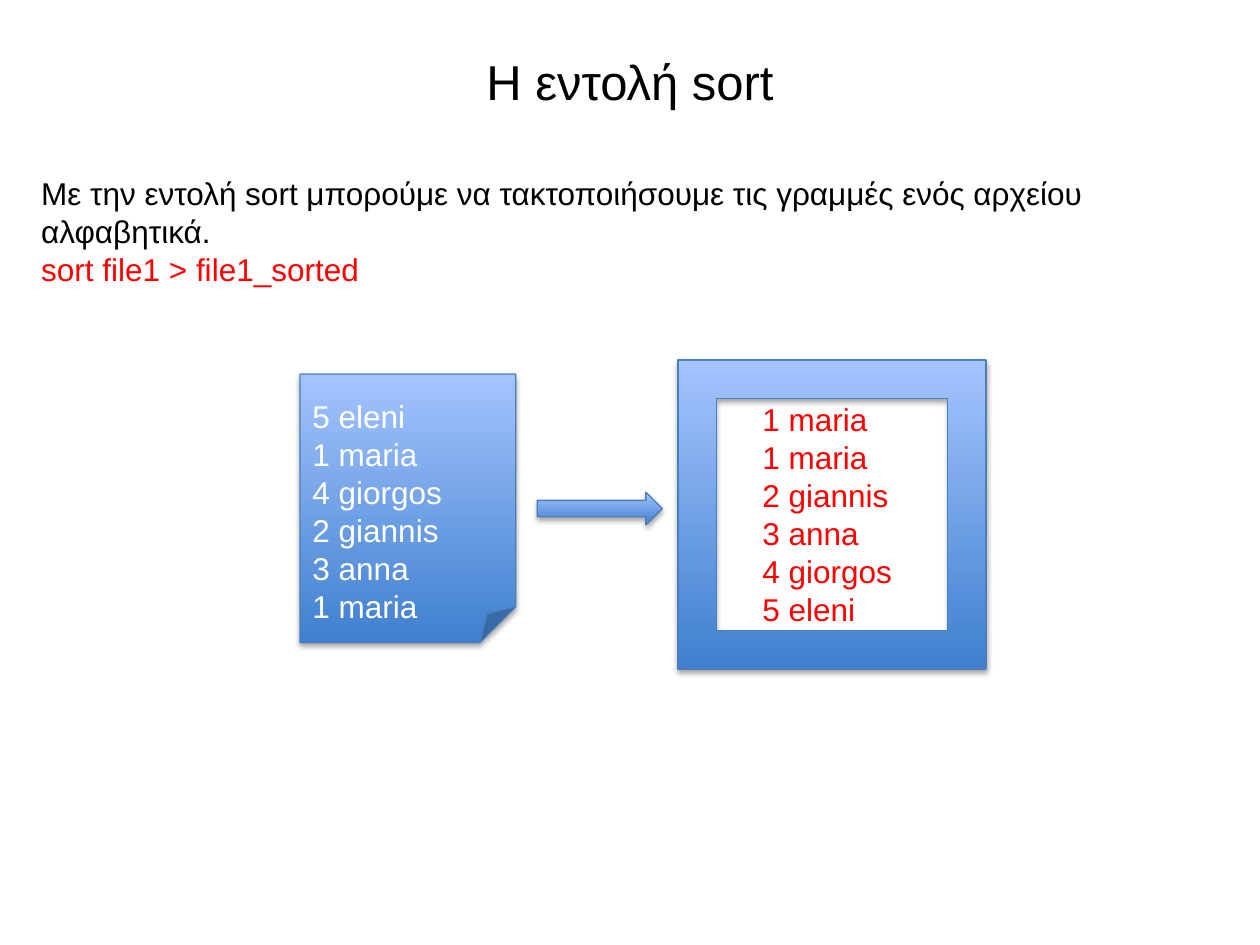
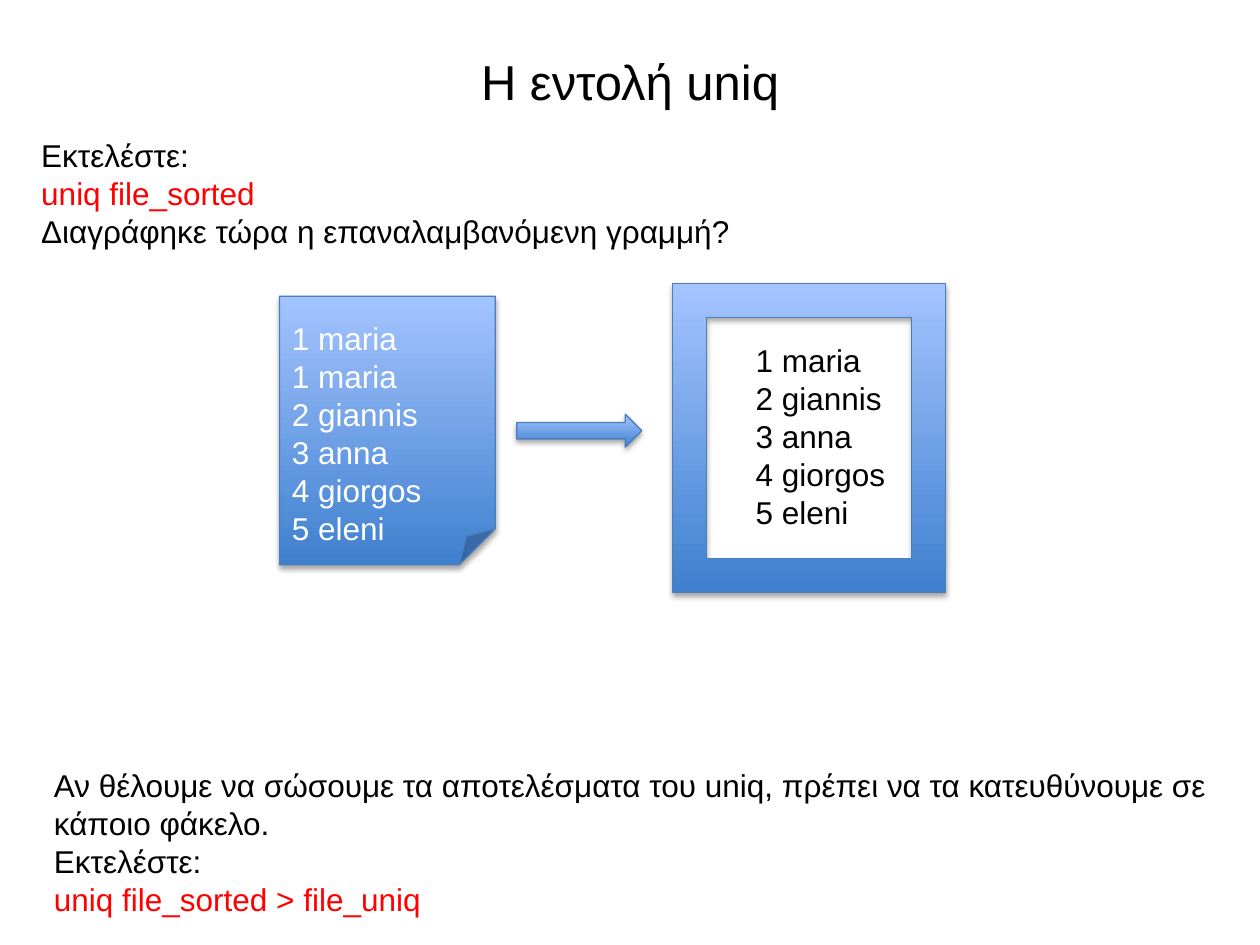
from pptx import Presentation
from pptx.util import Pt
from pptx.dml.color import RGBColor
from pptx.enum.shapes import MSO_SHAPE
from pptx.enum.text import PP_ALIGN, MSO_ANCHOR
from lxml import etree

BLACK = RGBColor(0, 0, 0)
WHITE = RGBColor(0xFF, 0xFF, 0xFF)
RED = RGBColor(0xFF, 0, 0)
DEEP = RGBColor(0x3F, 0x80, 0xCE)
PALE = RGBColor(0xA4, 0xC4, 0xFF)
EDGE = RGBColor(0x4B, 0x7E, 0xBC)
FONT = "Arial"
SHADE = (
    '<a:outerShdw xmlns:a="http://schemas.openxmlformats.org/drawingml/2006/main" '
    'blurRad="40000" dist="23000" dir="5400000" rotWithShape="0">'
    '<a:srgbClr val="000000"><a:alpha val="35000"/></a:srgbClr></a:outerShdw>'
)


def write(shape, text, size=18, color=BLACK, accent=None, align=PP_ALIGN.LEFT,
          anchor=MSO_ANCHOR.TOP, top=3.6, wrap=True):
    frame = shape.text_frame
    frame.word_wrap = wrap
    frame.vertical_anchor = anchor
    frame.margin_top = Pt(top)
    frame.text = text
    for row, para in enumerate(frame.paragraphs):
        para.alignment = align
        para.line_spacing = Pt(round(size * 1.205, 1))
        para.font.name = FONT
        para.font.size = Pt(size)
        para.font.color.rgb = RED if row == accent else color


def draw(slide, kind, x, y, w, h):
    shape = slide.shapes.add_shape(kind, Pt(x), Pt(y), Pt(w), Pt(h))
    shape.fill.gradient()
    shape.fill.gradient_angle = 90
    for stop, color in zip(shape.fill.gradient_stops, (DEEP, PALE)):
        stop.color.rgb = color
    shape.line.color.rgb = EDGE
    shape.line.width = Pt(0.75)
    shape.shadow.inherit = False
    shape._element.spPr.find("{*}effectLst").append(etree.fromstring(SHADE))
    return shape


SORTED = "1 maria\n1 maria\n2 giannis\n3 anna\n4 giorgos\n5 eleni"
UNIQUE = SORTED.split("\n", 1)[1]

PAGES = [
    dict(
        title="Η εντολή sort",
        notes=[("Με την εντολή sort μπορούμε να τακτοποιήσουμε τις γραμμές ενός "
                "αρχείου αλφαβητικά.\nsort file1 > file1_sorted",
                1, (16.5, 95.75, 692, 73))],
        input="5 eleni\n1 maria\n4 giorgos\n2 giannis\n3 anna\n1 maria",
        sheet=(171.5, 213.75),
        frame=(387.5, 205.75, 176),
        output=SORTED, list=(428.5, 224.75, 160), ink=RED,
    ),
    dict(
        title="Η εντολή uniq",
        notes=[("Εκτελέστε:\nuniq file_sorted\n"
                "Διαγράφηκε τώρα η επαναλαμβανόμενη γραμμή?",
                1, (16.5, 74.25, 692, 73)),
               ("Αν θέλουμε να σώσουμε τα αποτελέσματα του uniq, πρέπει να τα "
                "κατευθύνουμε σε κάποιο φάκελο.\nΕκτελέστε:\n"
                "uniq file_sorted > file_uniq",
                2, (23.75, 434.25, 676, 94.5))],
        input=SORTED,
        sheet=(159.75, 169.25),
        frame=(384.25, 162, 156),
        output=UNIQUE, list=(424.75, 191.5, 116.5), ink=BLACK,
    ),
]

deck = Presentation()
deck.slide_width, deck.slide_height = Pt(720), Pt(540)

for page in PAGES:
    slide = deck.slides.add_slide(deck.slide_layouts[6])
    title = slide.shapes.add_textbox(Pt(36), Pt(21.6), Pt(648), Pt(49))
    write(title, page["title"], size=28, align=PP_ALIGN.CENTER,
          anchor=MSO_ANCHOR.MIDDLE)

    for text, accent, area in page["notes"]:
        note = slide.shapes.add_textbox(*map(Pt, area))
        write(note, text, accent=accent)

    x, y = page["sheet"]
    sheet = draw(slide, MSO_SHAPE.FOLDED_CORNER, x, y, 123.25, 153.5)
    write(sheet, page["input"], color=WHITE, top=13)
    draw(slide, MSO_SHAPE.RIGHT_ARROW, x + 135.5, y + 67.5, 71.5, 18.75)

    x, y, width = page["frame"]
    draw(slide, MSO_SHAPE.FRAME, x, y, width, 176.5)
    x, y, height = page["list"]
    result = slide.shapes.add_textbox(Pt(x), Pt(y), Pt(89.25), Pt(height))
    write(result, page["output"], color=page["ink"], wrap=False)

deck.save("out.pptx")
